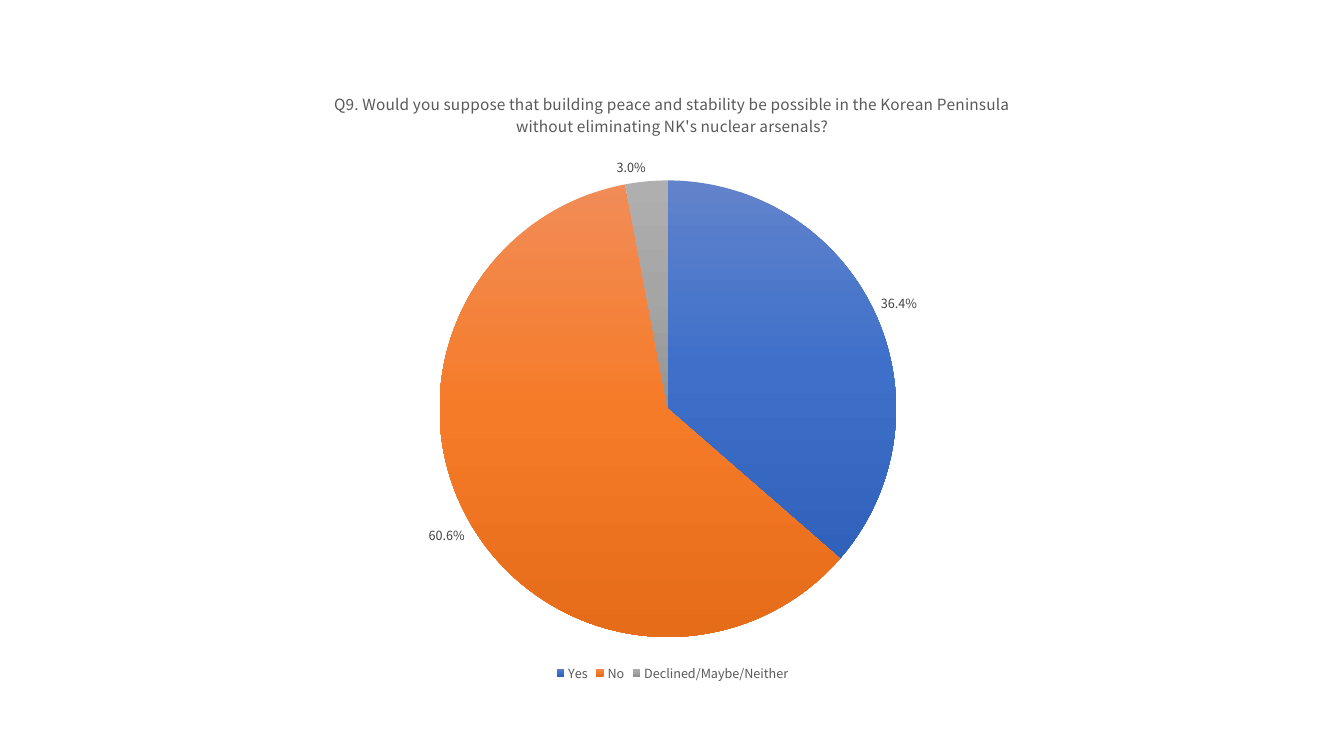
"""Build a slide with a pie chart of answers to survey question 9."""
import copy
from dataclasses import dataclass

import pptx
import pptx.chart.data
import pptx.chart.series
import pptx.dml.color
import pptx.enum.chart
import pptx.oxml
import pptx.oxml.ns
import pptx.text.text
import pptx.util
from pptx.dml.color import RGBColor
from pptx.util import Cm

FONT = "Noto Sans CJK KR"
GREY = RGBColor(0x59, 0x59, 0x59)
DARK_GREY = RGBColor(0x40, 0x40, 0x40)
BLACK = RGBColor(0x00, 0x00, 0x00)
BLUES = (RGBColor(0x61, 0x83, 0xCB), RGBColor(0x3E, 0x70, 0xCA), RGBColor(0x30, 0x62, 0xBB))
ORANGES = (RGBColor(0xF1, 0x8C, 0x57), RGBColor(0xF6, 0x7B, 0x28), RGBColor(0xE5, 0x6C, 0x19))
GREYS = (RGBColor(0xAF, 0xAF, 0xAF), RGBColor(0xA5, 0xA5, 0xA5), RGBColor(0x93, 0x93, 0x93))
QUESTION = (
    "Q9. Would you suppose that building peace and stability be possible in the "
    "Korean Peninsula without eliminating NK's nuclear arsenals?"
)


@dataclass(frozen=True)
class Answer:
    """One answer, its share and its gradient from top to bottom."""

    name: str
    share: float
    gradient: tuple[RGBColor, ...]


ANSWERS = (
    Answer("Yes", 0.364, BLUES),
    Answer("No", 0.606, ORANGES),
    Answer("Declined/Maybe/Neither", 0.03, GREYS),
)


def style_font(font: pptx.text.text.Font, size: float, color: RGBColor) -> None:
    """Set the typeface, size and colour of a font."""
    font.name = FONT
    font.size = pptx.util.Pt(size)
    font.bold = False
    font.color.rgb = color


def paint_slice(series: pptx.chart.series.PieSeries, index: int, answer: Answer) -> None:
    """Fill one slice with the three-step gradient of its answer."""
    fill = series.points[index].format.fill
    fill.gradient()
    fill.gradient_angle = 270
    stop_list = series._element.xpath(f"c:dPt[c:idx/@val='{index}']//a:gsLst")[0]
    stop_list.append(copy.deepcopy(stop_list[-1]))
    for step, (stop, color) in enumerate(zip(fill.gradient_stops, answer.gradient)):
        stop.position = step / 2
        stop.color.rgb = color


def place_plot(chart: pptx.chart.chart.Chart, x: float, y: float, w: float, h: float) -> None:
    """Fix the inner plot area, given as fractions of the chart."""
    plot_area = chart._chartSpace.chart.plotArea
    for automatic in plot_area.xpath("c:layout"):
        plot_area.remove(automatic)
    sizes = "".join(
        f'<c:{name} val="{value}"/>' for name, value in zip("xywh", (x, y, w, h))
    )
    plot_area.insert(0, pptx.oxml.parse_xml(
        f'<c:layout {pptx.oxml.ns.nsdecls("c")}><c:manualLayout>'
        '<c:layoutTarget val="inner"/><c:xMode val="edge"/><c:yMode val="edge"/>'
        f"{sizes}</c:manualLayout></c:layout>"
    ))


def main() -> None:
    """Create and save the presentation."""
    deck = pptx.Presentation()
    deck.slide_width, deck.slide_height = Cm(33.87), Cm(19.05)
    slide = deck.slides.add_slide(deck.slide_layouts[6])

    poll = pptx.chart.data.CategoryChartData(number_format="0.0%")
    poll.categories = [answer.name for answer in ANSWERS]
    poll.add_series(QUESTION, [answer.share for answer in ANSWERS])
    chart = slide.shapes.add_chart(
        pptx.enum.chart.XL_CHART_TYPE.PIE, Cm(5.44), Cm(1.78), Cm(23.01), Cm(15.49), poll
    ).chart
    style_font(chart.font, 10, BLACK)
    place_plot(chart, 0.245, 0.175, 0.5, 0.75)

    chart.has_title = True
    chart.chart_title.include_in_layout = False
    question = chart.chart_title.text_frame
    question.text = QUESTION
    style_font(question.paragraphs[0].runs[0].font, 11, GREY)

    chart.has_legend = True
    chart.legend.position = pptx.enum.chart.XL_LEGEND_POSITION.BOTTOM
    chart.legend.include_in_layout = False
    style_font(chart.legend.font, 9, GREY)

    pie = chart.plots[0]
    pie.vary_by_categories = True
    shares = pie.series[0]
    for index, answer in enumerate(ANSWERS):
        paint_slice(shares, index, answer)

    labels = shares.data_labels
    labels.show_value = True
    labels.number_format = "0.0%"
    labels.number_format_is_linked = False
    labels.position = pptx.enum.chart.XL_LABEL_POSITION.OUTSIDE_END
    style_font(labels.font, 9, DARK_GREY)

    deck.save("out.pptx")


if __name__ == "__main__":
    main()
